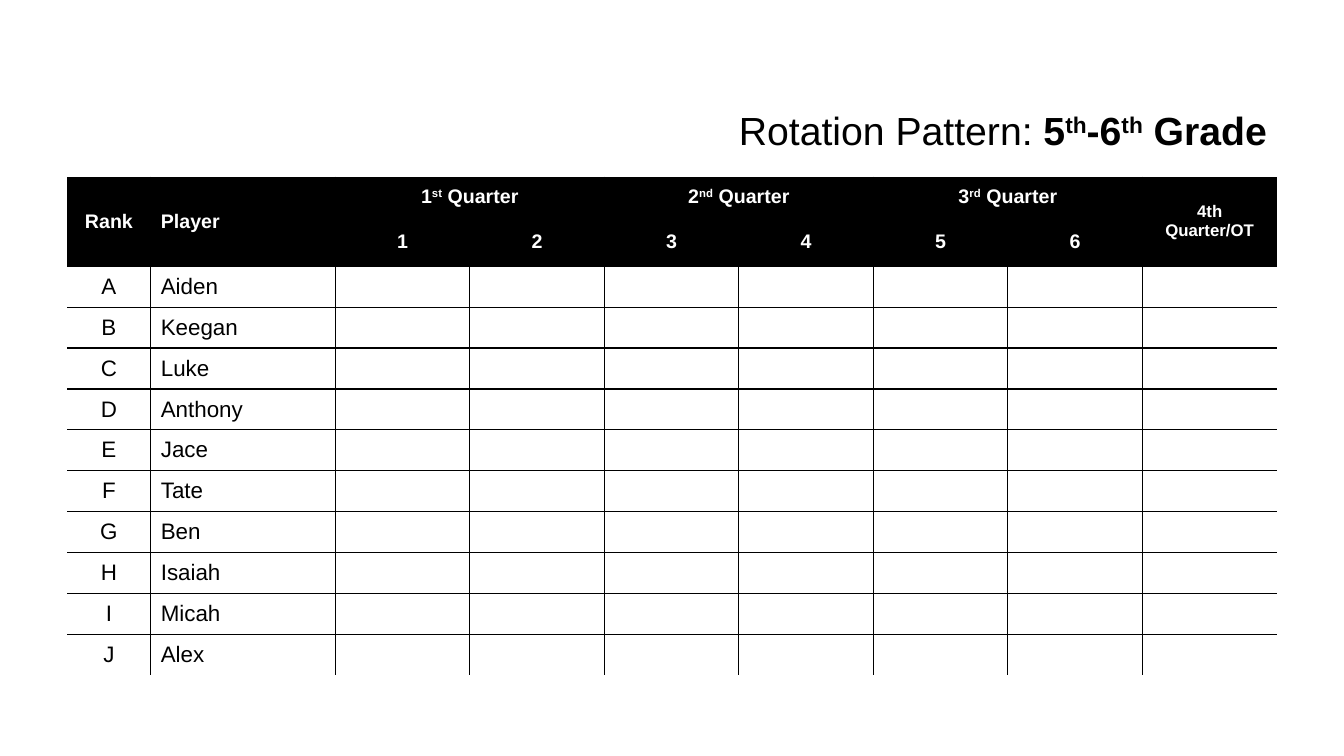
from lxml import etree
from pptx import Presentation
from pptx import util as u
from pptx.dml import color
from pptx.enum import text
from pptx.oxml import ns

BLACK, WHITE = "000000", "FFFFFF"
CENTER, LEFT, RIGHT = text.PP_ALIGN.CENTER, text.PP_ALIGN.LEFT, text.PP_ALIGN.RIGHT
PLAYERS = ["Aiden", "Keegan", "Luke", "Anthony", "Jace",
           "Tate", "Ben", "Isaiah", "Micah", "Alex"]
QUARTERS = [("1", "st"), ("2", "nd"), ("3", "rd")]
COLUMN_WIDTHS = [2.11, 4.65] + [3.39] * 7
ROW_HEIGHTS = [1.03, 1.23] + [1.03] * len(PLAYERS)


def rgb(value):
    return color.RGBColor.from_string(value)


class RotationSlide:
    font = "Arial"

    def __init__(self, deck):
        self.slide = deck.slides.add_slide(deck.slide_layouts[5])

    def add_runs(self, paragraph, runs, size, ink, align):
        paragraph.alignment = align
        for wording, bold, raised in runs:
            run = paragraph.add_run()
            run.text = wording
            run.font.name = self.font
            run.font.size = u.Pt(size)
            run.font.bold = bold
            run.font.color.rgb = rgb(ink)
            if raised:
                run._r.get_or_add_rPr().set("baseline", "30000")

    def title(self, runs, left, top, width, height):
        heading = self.slide.shapes.title
        heading.left, heading.top = u.Cm(left), u.Cm(top)
        heading.width, heading.height = u.Cm(width), u.Cm(height)
        frame = heading.text_frame
        frame.word_wrap = True
        frame.auto_size = text.MSO_AUTO_SIZE.NONE
        frame.vertical_anchor = text.MSO_ANCHOR.TOP
        self.add_runs(frame.paragraphs[0], runs, 28, BLACK, RIGHT)

    def table(self, left, top, widths, heights):
        rows, columns = len(heights), len(widths)
        grid = self.slide.shapes.add_table(
            rows, columns, u.Cm(left), u.Cm(top),
            u.Cm(sum(widths)), u.Cm(sum(heights))).table
        grid.first_row = grid.horz_banding = False
        for column, width in zip(grid.columns, widths):
            column.width = u.Cm(width)
        for row, height in zip(grid.rows, heights):
            row.height = u.Cm(height)
        for r in range(rows):
            for c in range(columns):
                cell = grid.cell(r, c)
                self.borders(cell, {"lnL": c > 0, "lnR": c < columns - 1,
                                    "lnT": r > 0, "lnB": r < rows - 1})
                cell.fill.solid()
                cell.fill.fore_color.rgb = rgb(BLACK if r < 2 else WHITE)
                cell.vertical_anchor = text.MSO_ANCHOR.MIDDLE
        return grid

    def borders(self, cell, edges):
        properties = cell._tc.get_or_add_tcPr()
        for edge, ruled in edges.items():
            line = etree.SubElement(properties, ns.qn("a:" + edge), w=str(u.Pt(1)))
            if ruled:
                fill = etree.SubElement(line, ns.qn("a:solidFill"))
                etree.SubElement(fill, ns.qn("a:srgbClr"), val=BLACK)
            else:
                etree.SubElement(line, ns.qn("a:noFill"))

    def header(self, cell, runs, size=14, align=CENTER, until=None):
        if until is not None:
            cell.merge(until)
        self.add_runs(cell.text_frame.paragraphs[0], runs, size, WHITE, align)

    def entry(self, cell, wording, align):
        self.add_runs(cell.text_frame.paragraphs[0], [(wording, False, False)],
                      16, BLACK, align)


def main():
    deck = Presentation()
    deck.slide_width, deck.slide_height = u.Cm(33.87), u.Cm(19.05)
    page = RotationSlide(deck)
    page.title([("Rotation Pattern:", False, False), (" 5", True, False),
                ("th", True, True), ("-6", True, False),
                ("th", True, True), (" Grade", True, False)],
               9.96, 2.54, 22.22, 1.45)

    rotation = page.table(1.69, 4.45, COLUMN_WIDTHS, ROW_HEIGHTS)
    for column, label, size, align in [(0, "Rank", 14, CENTER),
                                       (1, "Player", 14, LEFT),
                                       (8, "4th Quarter/OT", 12, CENTER)]:
        page.header(rotation.cell(0, column), [(label, True, False)], size, align,
                    rotation.cell(1, column))
    for index, (number, suffix) in enumerate(QUARTERS):
        first = 2 + 2 * index
        page.header(rotation.cell(0, first),
                    [(number, True, False), (suffix, True, True),
                     (" Quarter", True, False)],
                    until=rotation.cell(0, first + 1))
    for period in range(1, 7):
        page.header(rotation.cell(1, period + 1), [(str(period), True, False)])
    for row, (rank, player) in enumerate(zip("ABCDEFGHIJ", PLAYERS), 2):
        page.entry(rotation.cell(row, 0), rank, CENTER)
        page.entry(rotation.cell(row, 1), player, LEFT)
    deck.save("out.pptx")


if __name__ == "__main__":
    main()
